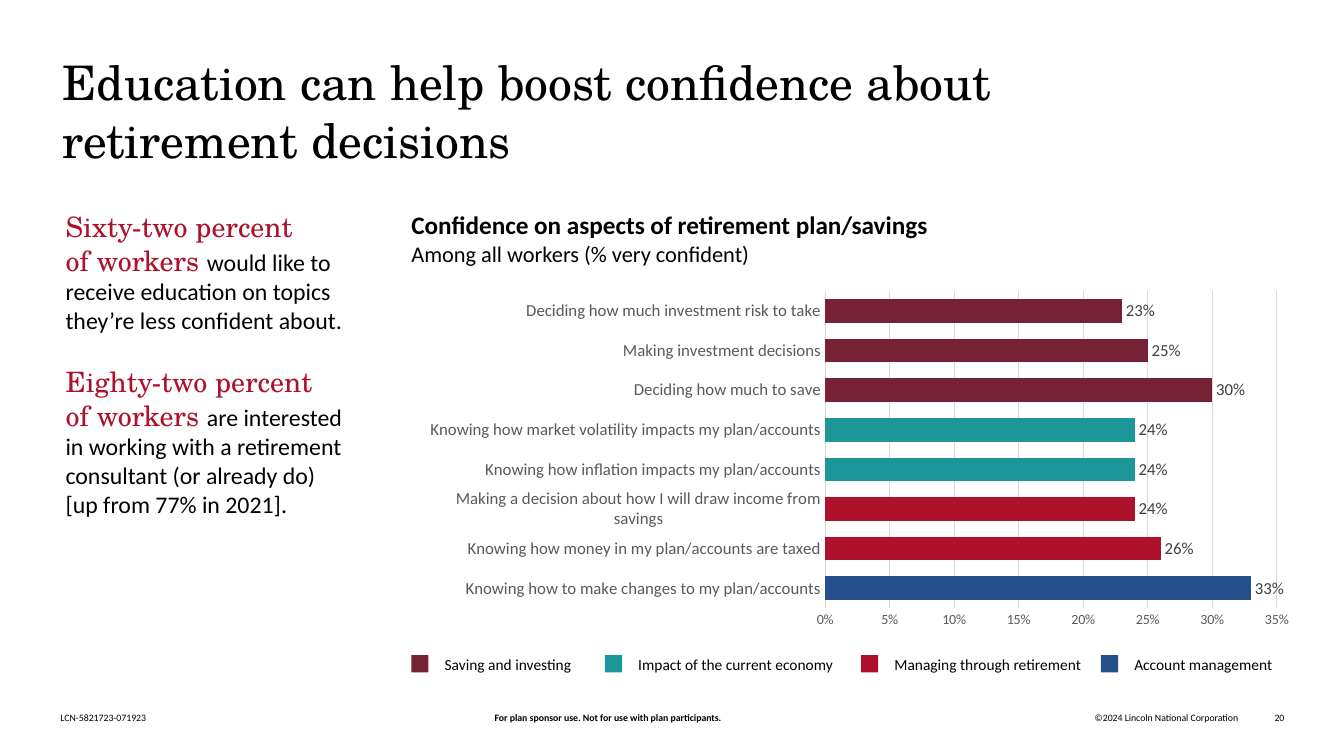
from lxml.etree import SubElement
from pptx import Presentation
from pptx.chart.data import CategoryChartData
from pptx.dml.color import RGBColor
from pptx.enum.chart import XL_CHART_TYPE, XL_LABEL_POSITION, XL_TICK_MARK
from pptx.enum.shapes import MSO_SHAPE
from pptx.enum.text import MSO_ANCHOR, MSO_AUTO_SIZE, PP_ALIGN
from pptx.oxml.ns import qn
from pptx.util import Inches, Pt

SANS, SERIF = "Calibri", "TeX Gyre Schola"
COLORS = {
    "black": "000000", "axis": "595959", "label": "404040", "grid": "D9D9D9",
    "saving": "762135", "economy": "1D9699", "managing": "AD112B", "account": "244F8B",
}
TOPICS = [
    ("Knowing how to make changes to my plan/accounts", 0.33, "account"),
    ("Knowing how money in my plan/accounts are taxed", 0.26, "managing"),
    ("Making a decision about how I will draw income from savings", 0.24, "managing"),
    ("Knowing how inflation impacts my plan/accounts", 0.24, "economy"),
    ("Knowing how market volatility impacts my plan/accounts", 0.24, "economy"),
    ("Deciding how much to save", 0.30, "saving"),
    ("Making investment decisions", 0.25, "saving"),
    ("Deciding how much investment risk to take", 0.23, "saving"),
]
LEGEND = [
    (0, "Saving and investing", "saving"),
    (1.92, "Impact of the current economy", "economy"),
    (4.46, "Managing through retirement", "managing"),
    (6.84, "Account management", "account"),
]
FINDINGS = [
    ("Sixty-two percent \vof workers ",
     ["would like to receive education on topics they’re less confident about."]),
    ("Eighty-two percent \vof workers ",
     ["are interested in working with a retirement consultant (or already do) ",
      "[up from 77% in 2021]."]),
]
FOOTERS = [
    (0, 1.87, "LCN-5821723-071923", PP_ALIGN.LEFT, False),
    (1.63, 7.6, "For plan sponsor use. Not for use with plan participants.", PP_ALIGN.CENTER, True),
    (9.23, 2.45, "©2024 Lincoln National Corporation", PP_ALIGN.RIGHT, False),
    (11.81, 0.33, "20", PP_ALIGN.RIGHT, False),
]


def rgb(name):
    """Return the named colour."""
    return RGBColor.from_string(COLORS[name])


def set_font(font, size, color="black", name=SANS, bold=False):
    """Set size, colour, typeface and weight of a font."""
    font.size, font.name, font.bold = Pt(size), name, bold
    font.color.rgb = rgb(color)


def set_frame(tf, anchor=MSO_ANCHOR.TOP):
    """Make a text frame wrap without margins."""
    tf.word_wrap, tf.auto_size, tf.vertical_anchor = True, MSO_AUTO_SIZE.NONE, anchor
    tf.margin_left = tf.margin_right = tf.margin_top = tf.margin_bottom = 0


def add_text(s, left, top, width, height, anchor=MSO_ANCHOR.TOP):
    """Add an empty text box and return its text frame."""
    tf = s.shapes.add_textbox(Inches(left), Inches(top), Inches(width), Inches(height)).text_frame
    set_frame(tf, anchor)
    return tf


def add_title(s, left, top, width, height):
    """Place the slide title."""
    sp = s.shapes.title
    sp.left, sp.top, sp.width, sp.height = map(Inches, (left, top, width, height))
    set_frame(sp.text_frame)
    p = sp.text_frame.paragraphs[0]
    p.text = "Education can help boost confidence about retirement decisions"
    p.alignment = PP_ALIGN.LEFT
    set_font(p.font, 34, name=SERIF)


def add_findings(s, left, top, width, height):
    """Write the two findings, each with a coloured lead-in."""
    tf = add_text(s, left, top, width, height)
    for i, (lead, lines) in enumerate(FINDINGS):
        p = tf.add_paragraph() if i else tf.paragraphs[0]
        if i:
            p.space_before = Pt(22)
        p.text = lead
        for r in p.runs:
            set_font(r.font, 20, "managing", SERIF)
        for j, line in enumerate(lines):
            if j:
                p.add_line_break()
            r = p.add_run()
            r.text = line
            set_font(r.font, 17)


def add_heading(s, left, top, width, height):
    """Write the chart heading and its subheading."""
    tf = add_text(s, left, top, width, height)
    p = tf.paragraphs[0]
    p.text = "Confidence on aspects of retirement plan/savings"
    set_font(p.font, 18, bold=True)
    p = tf.add_paragraph()
    p.text = "Among all workers (% very confident)"
    set_font(p.font, 16)


def set_plot_box(chart, x, y, w, h):
    """Fix the inner plot area as fractions of the chart."""
    area = chart.plots[0]._element.getparent()
    layout = area.find(qn("c:layout"))
    if layout is None:
        layout = SubElement(area, qn("c:layout"))
        area.insert(0, layout)
    manual = SubElement(layout, qn("c:manualLayout"))
    for tag, val in [("layoutTarget", "inner"), ("xMode", "edge"), ("yMode", "edge"),
                     ("x", x), ("y", y), ("w", w), ("h", h)]:
        SubElement(manual, qn("c:" + tag)).set("val", str(val))


def add_bars(s, left, top, width, height):
    """Add the bar chart with bars coloured by theme."""
    data = CategoryChartData(number_format="0%")
    data.categories = [name for name, _, _ in TOPICS]
    data.add_series("Series 1", [val for _, val, _ in TOPICS])
    chart = s.shapes.add_chart(XL_CHART_TYPE.BAR_CLUSTERED, Inches(left), Inches(top),
                               Inches(width), Inches(height), data).chart
    chart.has_title = chart.has_legend = False
    set_font(chart.font, 10)
    set_plot_box(chart, 0.469, 0.033, 0.512, 0.804)

    cat, val = chart.category_axis, chart.value_axis
    for axis, size in [(cat, 12), (val, 10)]:
        axis.major_tick_mark = axis.minor_tick_mark = XL_TICK_MARK.NONE
        set_font(axis.tick_labels.font, size, "axis")
    val.minimum_scale, val.maximum_scale, val.major_unit = 0, 0.35, 0.05
    val.tick_labels.number_format, val.tick_labels.number_format_is_linked = "0%", False
    val.format.line.fill.background()
    val.has_major_gridlines, cat.has_major_gridlines = True, False
    for line in (cat.format.line, val.major_gridlines.format.line):
        line.color.rgb, line.width = rgb("grid"), Pt(0.75)

    plot = chart.plots[0]
    plot.gap_width, plot.vary_by_categories = 68, False
    series = plot.series[0]
    series.format.fill.solid()
    series.format.fill.fore_color.rgb = rgb("managing")
    for i, (_, _, theme) in enumerate(TOPICS):
        fill = series.points[i].format.fill
        fill.solid()
        fill.fore_color.rgb = rgb(theme)
    labels = series.data_labels
    labels.show_value, labels.position = True, XL_LABEL_POSITION.OUTSIDE_END
    labels.number_format, labels.number_format_is_linked = "0%", False
    set_font(labels.font, 12, "label")


def add_legend(s, left, top):
    """Lay out the theme swatches and their names."""
    for dx, name, theme in LEGEND:
        sp = s.shapes.add_shape(MSO_SHAPE.RECTANGLE, Inches(left + dx), Inches(top),
                                Inches(0.17), Inches(0.17))
        sp.shadow.inherit = False
        sp.fill.solid()
        sp.fill.fore_color.rgb = rgb(theme)
        sp.line.fill.background()
        p = add_text(s, left + dx + 0.33, top, 2.08, 0.19).paragraphs[0]
        p.text = name
        set_font(p.font, 11)


def add_footer(s, left, top):
    """Write the footer line."""
    for dx, width, text, align, bold in FOOTERS:
        p = add_text(s, left + dx, top, width, 0.12, MSO_ANCHOR.BOTTOM).paragraphs[0]
        p.text, p.alignment = text, align
        set_font(p.font, 7, bold=bold)


def main():
    """Build and save the slide."""
    prs = Presentation()
    prs.slide_width, prs.slide_height = Inches(13.33), Inches(7.5)
    s = prs.slides.add_slide(prs.slide_layouts[5])
    add_title(s, 0.62, 0.53, 10.79, 1.14)
    add_findings(s, 0.65, 2.08, 2.88, 3.08)
    add_heading(s, 4.08, 2.08, 7.21, 0.57)
    add_bars(s, 4.08, 2.76, 8.75, 3.91)
    add_legend(s, 4.08, 6.5)
    add_footer(s, 0.6, 7.06)
    prs.save("out.pptx")


if __name__ == "__main__":
    main()
